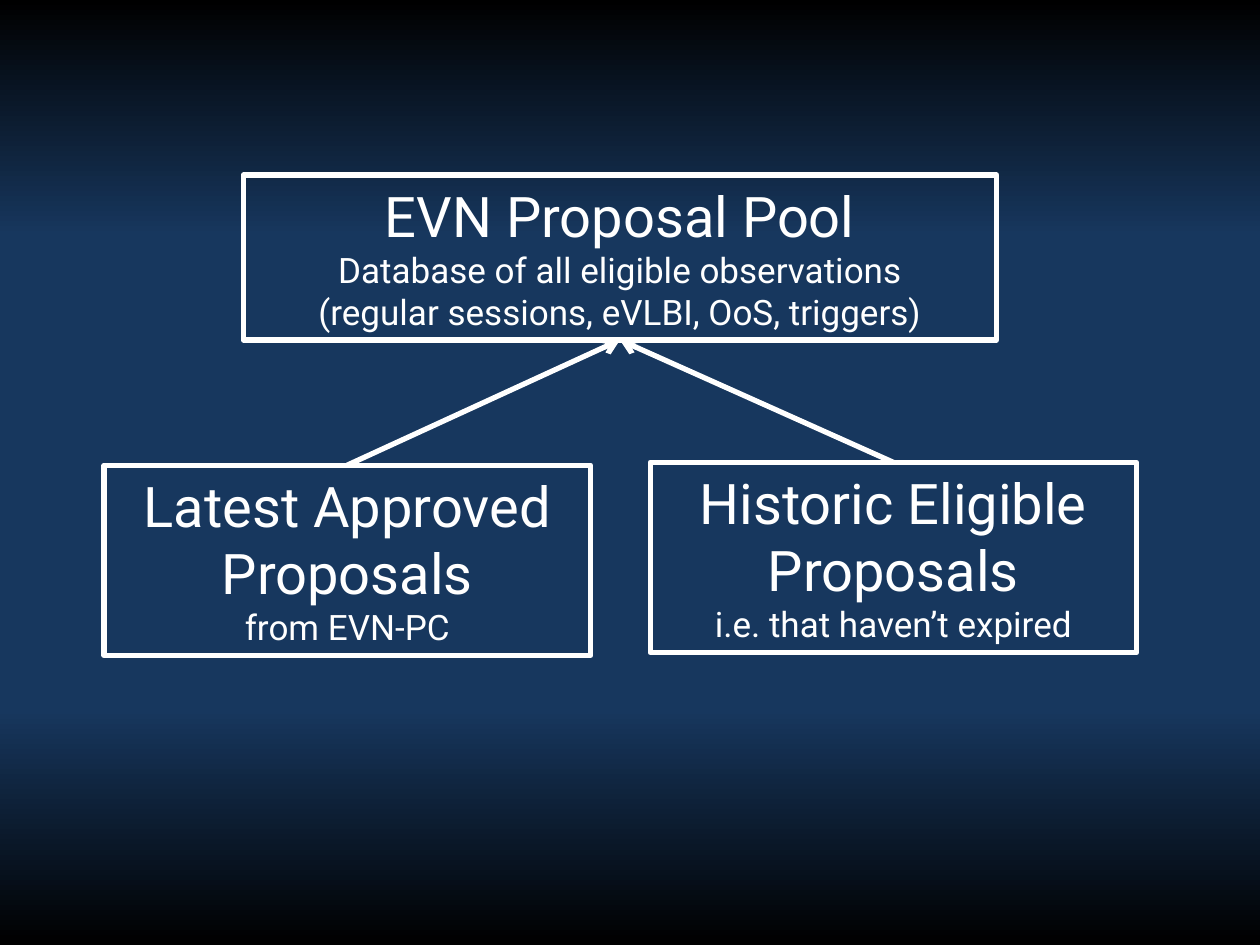
from copy import deepcopy

from lxml.etree import SubElement
from pptx import Presentation
from pptx.dml.color import RGBColor
from pptx.enum.shapes import MSO_CONNECTOR
from pptx.enum.text import MSO_AUTO_SIZE, PP_ALIGN
from pptx.oxml.ns import qn
from pptx.util import Pt

WHITE = RGBColor(0xFF, 0xFF, 0xFF)
BLACK = RGBColor(0x00, 0x00, 0x00)
NAVY = RGBColor(0x17, 0x37, 0x5E)
FONT = "Roboto"
LINE_WIDTH = Pt(3)
TOP_SITE, BOTTOM_SITE = 0, 2


def paint_background(slide):
    """Fill the background with a vertical black-navy-black gradient."""
    fill = slide.background.fill
    fill.gradient()
    fill.gradient_angle = 270
    stop_list = slide.element.find(".//" + qn("a:gsLst"))
    for stop in list(stop_list):
        stop_list.append(deepcopy(stop))
    colours = [(0, BLACK), (0.25, NAVY), (0.75, NAVY), (1, BLACK)]
    for stop, (position, colour) in zip(fill.gradient_stops, colours):
        stop.position = position
        stop.color.rgb = colour


def style_line(line):
    """Give a line the common colour and width."""
    line.color.rgb = WHITE
    line.width = LINE_WIDTH


def add_box(slide, left, top, width, height, heading, *details):
    """Add an outlined box with a heading and smaller detail lines."""
    box = slide.shapes.add_textbox(Pt(left), Pt(top), Pt(width), Pt(height))
    style_line(box.line)
    text_frame = box.text_frame
    text_frame.word_wrap = True
    text_frame.auto_size = MSO_AUTO_SIZE.SHAPE_TO_FIT_TEXT
    text_frame.text = "\n".join((heading, *details))
    for index, paragraph in enumerate(text_frame.paragraphs):
        paragraph.alignment = PP_ALIGN.CENTER
        paragraph.font.name = FONT
        paragraph.font.size = Pt(20 if index else 32)
        paragraph.font.color.rgb = WHITE
    return box


def add_arrow(slide, source, target):
    """Connect the top of the source box to the bottom of the target box."""
    arrow = slide.shapes.add_connector(MSO_CONNECTOR.STRAIGHT, 0, 0, 0, 0)
    arrow.begin_connect(source, TOP_SITE)
    arrow.end_connect(target, BOTTOM_SITE)
    style_line(arrow.line)
    SubElement(arrow.line._get_or_add_ln(), qn("a:tailEnd"), type="arrow")
    SubElement(arrow.element.spPr, qn("a:effectLst"))


def main():
    """Build and save the proposal pool slide."""
    presentation = Presentation()
    presentation.slide_width, presentation.slide_height = Pt(720), Pt(540)
    slide = presentation.slides.add_slide(presentation.slide_layouts[6])
    paint_background(slide)
    pool = add_box(
        slide, 139, 100, 430.5, 94.3,
        "EVN Proposal Pool",
        "Database of all eligible observations",
        "(regular sessions, eVLBI, OoS, triggers)",
    )
    sources = [
        (59.5, 265.8, "Latest Approved Proposals", "from EVN-PC"),
        (371.5, 264.2, "Historic Eligible Proposals", "i.e. that haven’t expired"),
    ]
    for left, top, heading, detail in sources:
        source = add_box(slide, left, top, 278, 108.7, heading, detail)
        add_arrow(slide, source, pool)
    presentation.save("out.pptx")


if __name__ == "__main__":
    main()
